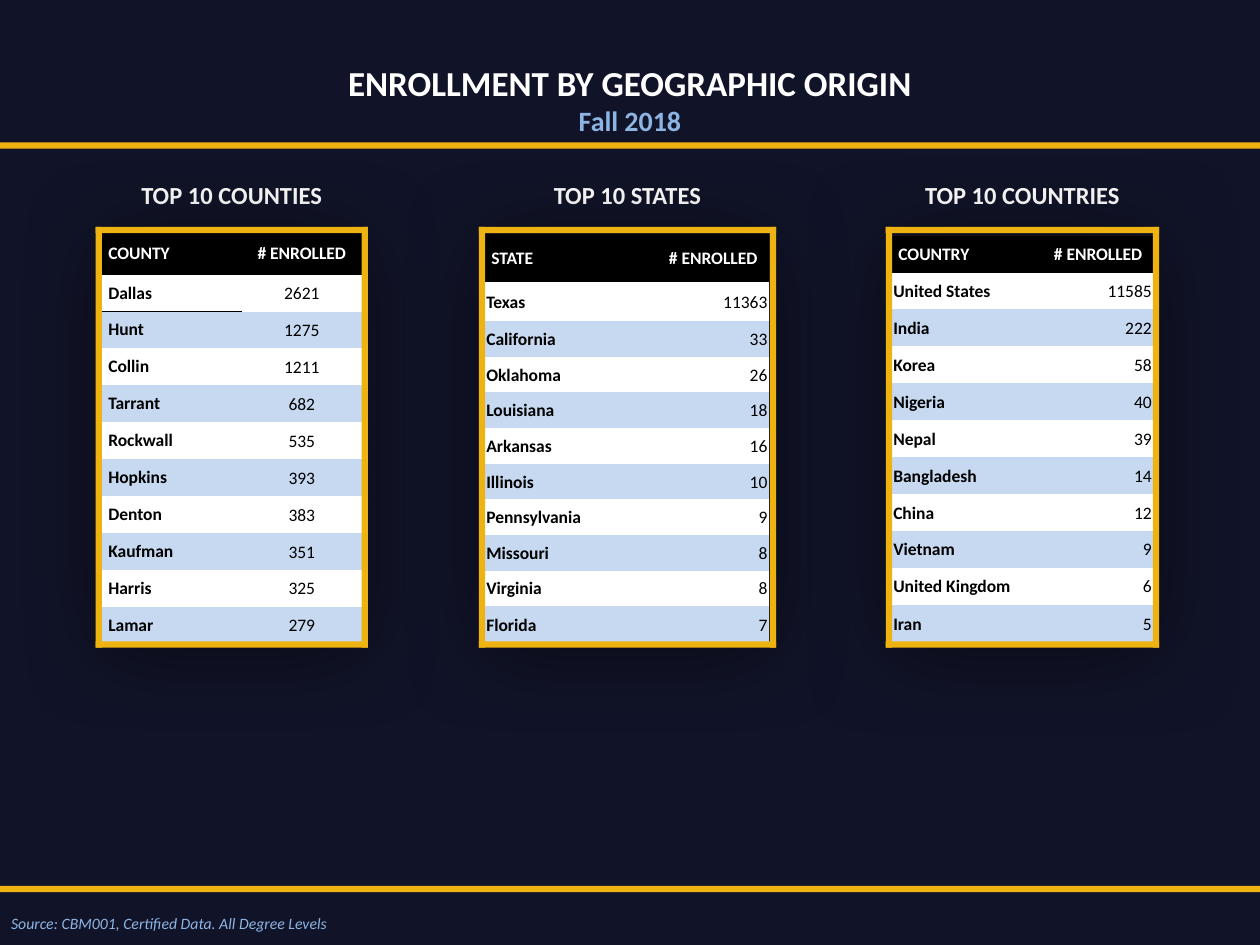
from lxml import etree
from pptx import Presentation
from pptx.dml.color import RGBColor
from pptx.enum.shapes import MSO_SHAPE
from pptx.enum.text import MSO_ANCHOR, PP_ALIGN
from pptx.oxml import parse_xml
from pptx.util import Inches, Pt

RECT = MSO_SHAPE.RECTANGLE
MIDDLE = MSO_ANCHOR.MIDDLE
LEFT, CENTER, RIGHT = PP_ALIGN.LEFT, PP_ALIGN.CENTER, PP_ALIGN.RIGHT

NS = "http://schemas.openxmlformats.org/drawingml/2006/main"
NO_STYLE = "{2D5ABB26-0587-4C30-8999-92F81FD0307C}"
FONT = "Calibri"
NAVY, GOLD, SKY = "111428", "EEB211", "8EB4E3"
BLACK, WHITE, BAND = "000000", "FFFFFF", "C6D9F1"
UNIT = Inches(0.1)
COLS, ROWS = 100, 75
BAR = 0.5
FRAME_TOP, FRAME_HEIGHT = 18, 33.4
WIDE, TIGHT = (0.5, 0.5, 0.5, 0.5), (0.1, 0.1, 0.1, 0)

TABLES = [
    dict(
        title="TOP 10 COUNTIES", frame=(7.6, 21.6), at=(8.1, 18.5),
        cols=[11.1, 9.5], rows=[3.3] + [2.93] * 10,
        name_inset=WIDE, align=CENTER, ruled=True,
        data=[("COUNTY", "# ENROLLED"), ("Dallas", 2621), ("Hunt", 1275),
              ("Collin", 1211), ("Tarrant", 682), ("Rockwall", 535),
              ("Hopkins", 393), ("Denton", 383), ("Kaufman", 351),
              ("Harris", 325), ("Lamar", 279)],
    ),
    dict(
        title="TOP 10 STATES", frame=(38, 23.6), at=(38.5, 18.6),
        cols=[13.7, 8.8], rows=[3.8, 3.1] + [2.83] * 8 + [3],
        name_inset=TIGHT, align=RIGHT, ruled=False,
        data=[("STATE", "# ENROLLED"), ("Texas", 11363), ("California", 33),
              ("Oklahoma", 26), ("Louisiana", 18), ("Arkansas", 16),
              ("Illinois", 10), ("Pennsylvania", 9), ("Missouri", 8),
              ("Virginia", 8), ("Florida", 7)],
    ),
    dict(
        title="TOP 10 COUNTRIES", frame=(70.3, 21.7), at=(70.8, 18.7),
        cols=[12, 8.7], rows=[2.93] * 10 + [3.1],
        name_inset=TIGHT, align=RIGHT, ruled=False,
        data=[("COUNTRY", "# ENROLLED"), ("United States", 11585),
              ("India", 222), ("Korea", 58), ("Nigeria", 40), ("Nepal", 39),
              ("Bangladesh", 14), ("China", 12), ("Vietnam", 9),
              ("United Kingdom", 6), ("Iran", 5)],
    ),
]


def grid(*cells):
    return [round(n * UNIT) for n in cells]


def paint(fill, color):
    fill.solid()
    fill.fore_color.rgb = RGBColor.from_string(color)


def add_run(p, text, size, color, bold=False, italic=False, align=LEFT):
    p.alignment = align
    r = p.add_run()
    r.text = text
    r.font.name, r.font.size = FONT, Pt(size)
    r.font.bold, r.font.italic = bold, italic
    r.font.color.rgb = RGBColor.from_string(color)


def add_text(s, at, lines, **style):
    tf = s.shapes.add_textbox(*grid(*at)).text_frame
    tf.word_wrap = True
    for i, (text, size, color) in enumerate(lines):
        p = tf.add_paragraph() if i else tf.paragraphs[0]
        add_run(p, text, size, color, **style)


def add_bar(s, x, y, w, h):
    sp = s.shapes.add_shape(RECT, *grid(x, y, w, h))
    sp.shadow.inherit = False
    paint(sp.fill, GOLD)
    sp.line.fill.background()


def add_frame(s, x, w):
    for y in (FRAME_TOP, FRAME_TOP + FRAME_HEIGHT - BAR):
        add_bar(s, x, y, w, BAR)
    for left in (x, x + w - BAR):
        add_bar(s, left, FRAME_TOP, BAR, FRAME_HEIGHT)


def add_border(cell, sides):
    tcPr = cell._tc.get_or_add_tcPr()
    for i, side in enumerate(sides):
        tcPr.insert(i, parse_xml(
            f'<a:ln{side} xmlns:a="{NS}" w="12700"><a:solidFill>'
            f'<a:srgbClr val="{BLACK}"/></a:solidFill></a:ln{side}>'))


def add_glow(tbl):
    tblPr = tbl._tbl.tblPr
    tblPr.insert(0, parse_xml(
        f'<a:effectLst xmlns:a="{NS}"><a:outerShdw blurRad="{Inches(0.7)}" '
        f'dist="{Inches(0.05)}" dir="5400000" algn="ctr" rotWithShape="0">'
        f'<a:srgbClr val="{BLACK}"><a:alpha val="50000"/></a:srgbClr>'
        '</a:outerShdw></a:effectLst>'))
    style = tblPr.find(etree.QName(NS, "tableStyleId").text)
    style.text = NO_STYLE


def fill_cell(cell, text, fill, color, bold, align, inset):
    cell.vertical_anchor = MIDDLE
    (cell.margin_left, cell.margin_right,
     cell.margin_top, cell.margin_bottom) = grid(*inset)
    paint(cell.fill, fill)
    add_run(cell.text_frame.paragraphs[0], text, 10, color, bold, align=align)


def add_ranking(s, t):
    size = sum(t["cols"]), sum(t["rows"])
    tbl = s.shapes.add_table(len(t["rows"]), 2, *grid(*t["at"], *size)).table
    tbl.first_row = tbl.horz_banding = False
    add_glow(tbl)
    for col, w in zip(tbl.columns, grid(*t["cols"])):
        col.width = w
    for row, h in zip(tbl.rows, grid(*t["rows"])):
        row.height = h
    for i, (name, count) in enumerate(t["data"]):
        head = i == 0
        fill = BLACK if head else WHITE if i % 2 else BAND
        color = WHITE if head else BLACK
        fill_cell(tbl.cell(i, 0), name, fill, color, True, LEFT,
                  WIDE if head else t["name_inset"])
        fill_cell(tbl.cell(i, 1), str(count), fill, color, head,
                  CENTER if head else t["align"], WIDE if head else TIGHT)
    if t["ruled"]:
        add_border(tbl.cell(0, 0), "LRTB")
        add_border(tbl.cell(0, 1), "L")
        add_border(tbl.cell(1, 0), "T")


def main():
    prs = Presentation()
    prs.slide_width, prs.slide_height = grid(COLS, ROWS)
    s = prs.slides.add_slide(prs.slide_layouts[6])
    paint(s.background.fill, NAVY)
    add_text(s, (0, 4.4, COLS, 10.1),
             [("ENROLLMENT BY GEOGRAPHIC ORIGIN", 20, WHITE),
              ("Fall 2018", 16, SKY)], bold=True, align=CENTER)
    add_text(s, (-0.1, 72, 28, 2.5),
             [("Source: CBM001, Certified Data. All Degree Levels", 9, SKY)],
             italic=True)
    for y in (11.3, 70.3):
        add_bar(s, 0, y, COLS, BAR)
    for t in TABLES:
        x, w = t["frame"]
        add_text(s, (x, 13.8, w, 3.4), [(t["title"], 14, WHITE)],
                 bold=True, align=CENTER)
        add_ranking(s, t)
        add_frame(s, x, w)
    prs.save("out.pptx")


if __name__ == "__main__":
    main()
